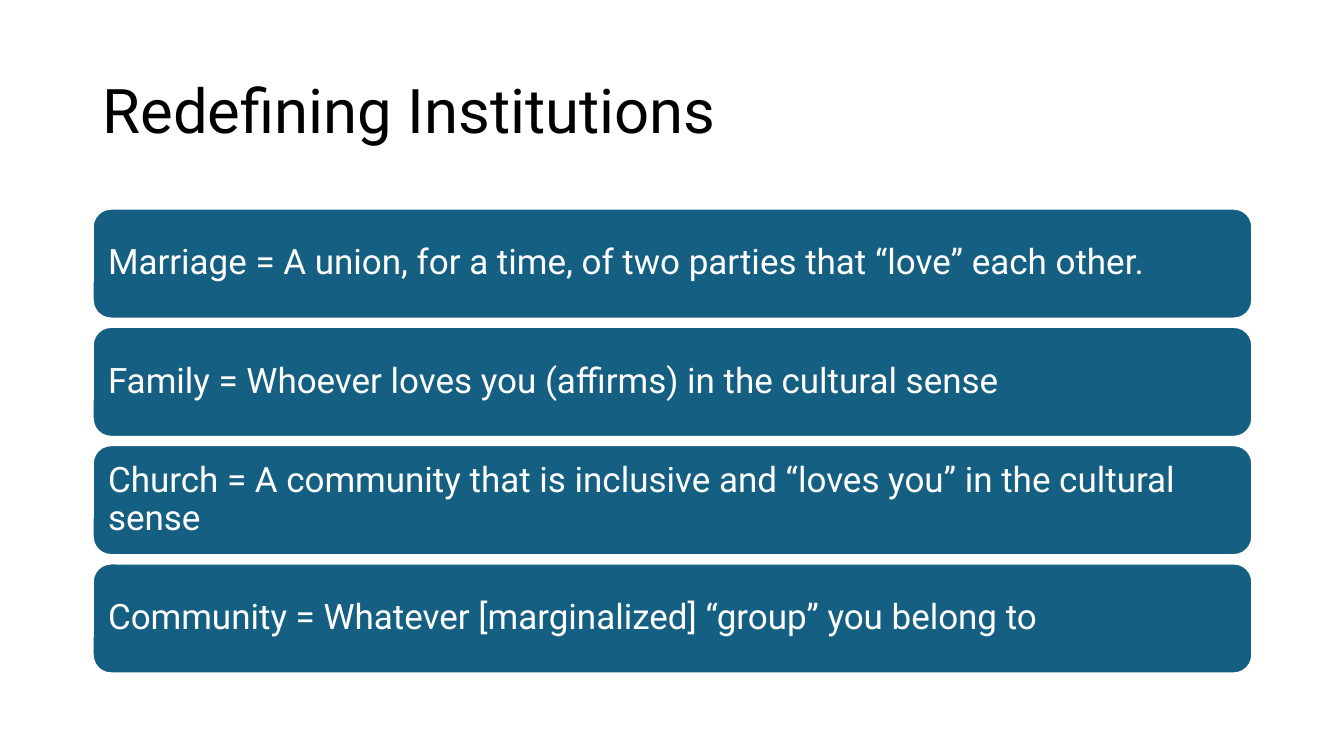
from dataclasses import dataclass

import pptx
import pptx.dml.color
import pptx.enum.shapes
import pptx.enum.text
import pptx.util
from pptx.util import Inches


@dataclass(frozen=True)
class Theme:
    font: str = "Roboto"
    title_size: float = 44
    bar_size: float = 25
    title_color: str = "000000"
    bar_fill: str = "156082"
    bar_text: str = "FFFFFF"
    bar_line: str = "FFFFFF"


THEME = Theme()
LEFT, WIDTH = 0.92, 11.5
FIRST_TOP, LAST_TOP, BAR_HEIGHT = 2.07, 5.59, 1.09

DEFINITIONS = [
    "Marriage = A union, for a time, of two parties that “love” each other.",
    "Family = Whoever loves you (affirms) in the cultural sense",
    "Church = A community that is inclusive and “loves you” in the cultural sense",
    "Community = Whatever [marginalized] “group” you belong to",
]


def rgb(color):
    return pptx.dml.color.RGBColor.from_string(color)


def write_text(sp, text, size, color):
    """Set one left-aligned, vertically centred paragraph."""
    tf = sp.text_frame
    tf.word_wrap = True
    tf.vertical_anchor = pptx.enum.text.MSO_ANCHOR.MIDDLE
    p = tf.paragraphs[0]
    p.alignment = pptx.enum.text.PP_ALIGN.LEFT
    p.line_spacing = 0.9
    r = p.add_run()
    r.text = text
    r.font.name = THEME.font
    r.font.size = pptx.util.Pt(size)
    r.font.color.rgb = rgb(color)
    return tf


def add_title(s, text):
    sp = s.shapes.add_textbox(Inches(LEFT), Inches(0.4), Inches(WIDTH), Inches(1.45))
    write_text(sp, text, THEME.title_size, THEME.title_color)


def add_bar(s, top, text):
    sp = s.shapes.add_shape(
        pptx.enum.shapes.MSO_SHAPE.ROUNDED_RECTANGLE,
        Inches(LEFT), Inches(top), Inches(WIDTH), Inches(BAR_HEIGHT),
    )
    sp.shadow.inherit = False
    sp.fill.solid()
    sp.fill.fore_color.rgb = rgb(THEME.bar_fill)
    sp.line.color.rgb = rgb(THEME.bar_line)
    sp.line.width = pptx.util.Pt(1.5)
    tf = write_text(sp, text, THEME.bar_size, THEME.bar_text)
    tf.margin_left = tf.margin_right = Inches(0.1)
    tf.margin_top = tf.margin_bottom = Inches(0.1)


def main():
    prs = pptx.Presentation()
    prs.slide_width, prs.slide_height = Inches(13.33), Inches(7.5)
    s = prs.slides.add_slide(prs.slide_layouts[6])
    add_title(s, "Redefining Institutions")
    pitch = (LAST_TOP - FIRST_TOP) / (len(DEFINITIONS) - 1)
    for i, text in enumerate(DEFINITIONS):
        add_bar(s, FIRST_TOP + i * pitch, text)
    prs.save("out.pptx")


if __name__ == "__main__":
    main()
